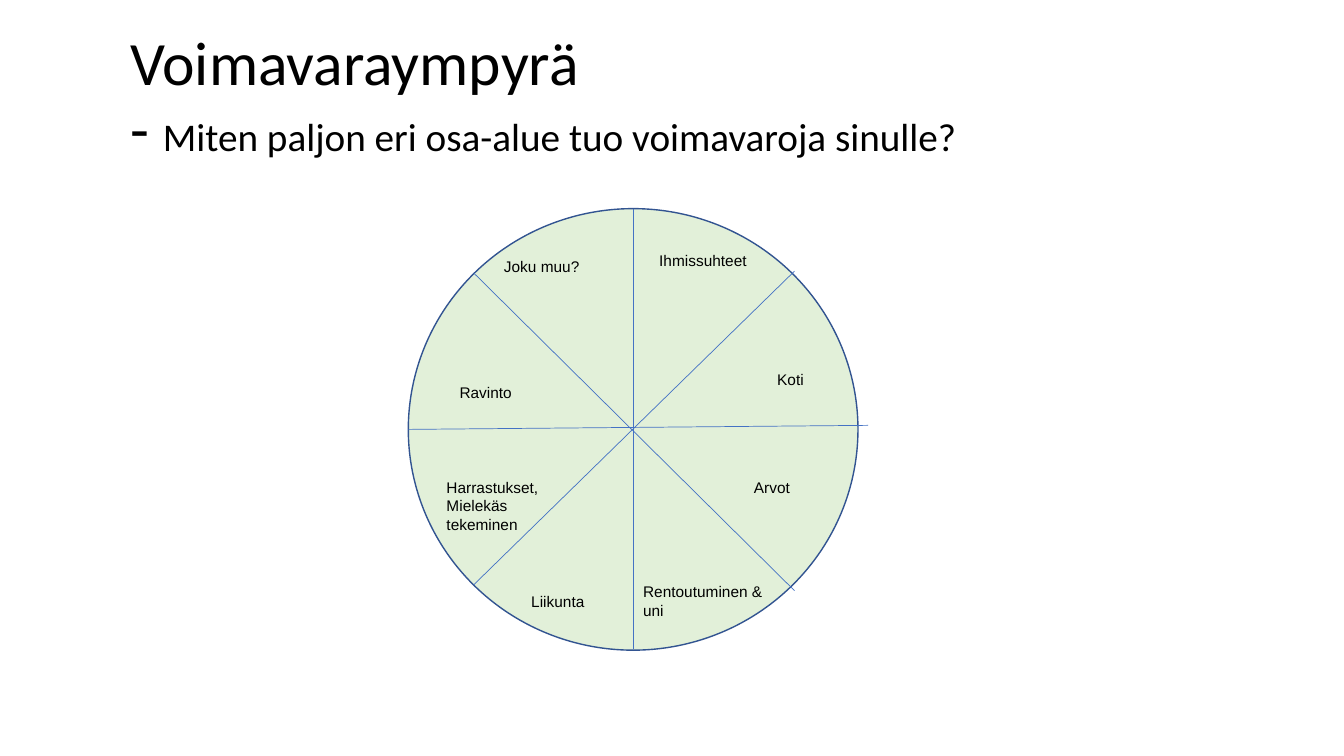
"""Build the resource circle slide: a titled disc cut into eight labelled sectors."""
from lxml.etree import SubElement
from pptx import Presentation
from pptx.dml.color import RGBColor
from pptx.enum.shapes import MSO_CONNECTOR, MSO_SHAPE
from pptx.enum.text import MSO_ANCHOR, MSO_AUTO_SIZE, PP_ALIGN
from pptx.oxml.ns import qn
from pptx.util import Pt

PX = 9144
COLOURS = {"text": "000000", "disc": "E2F0D9", "rim": "325491", "spoke": "4472C4"}


def colour(name):
    return RGBColor.from_string(COLOURS[name])


def place(*lengths):
    return [length * PX for length in lengths]


deck = Presentation()
deck.slide_width, deck.slide_height = place(1333, 750)
page = deck.slides.add_slide(deck.slide_layouts[5])

title = page.shapes.title
title.left, title.top, title.width, title.height = place(129, 55, 1135, 109)
frame = title.text_frame
frame.auto_size = MSO_AUTO_SIZE.NONE
frame.word_wrap = True
frame.vertical_anchor = MSO_ANCHOR.BOTTOM
frame.margin_left = frame.margin_top = frame.margin_right = frame.margin_bottom = 0
para = frame.paragraphs[0]
para.alignment = PP_ALIGN.LEFT
para.line_spacing = 0.9
for text, size in [
    ("Voimavaraympyrä", 44),
    ("- ", 44),
    ("Miten paljon eri osa-alue tuo voimavaroja sinulle?", 28),
]:
    span = para.add_run()
    span.text = text
    span.font.size = Pt(size)
    span.font.name = "Calibri"
    span.font.color.rgb = colour("text")
    if text == "Voimavaraympyrä":
        para.add_line_break()

disc = page.shapes.add_shape(MSO_SHAPE.FLOWCHART_CONNECTOR, *place(405, 207, 446, 438))
disc.shadow.inherit = False
disc.fill.solid()
disc.fill.fore_color.rgb = colour("disc")
disc.line.color.rgb = colour("rim")
disc.line.width = Pt(1)

for ends in [
    (628, 207, 628, 644),
    (405, 426, 861, 422),
    (470, 580, 788, 269),
    (470, 271, 788, 586),
]:
    spoke = page.shapes.add_connector(MSO_CONNECTOR.STRAIGHT, *place(*ends))
    spoke.line.color.rgb = colour("spoke")
    spoke.line.width = Pt(0.5)
    SubElement(spoke._element.spPr, qn("a:effectLst"))

for text, left, top, width, height, wraps in [
    ("Ihmissuhteet", 644, 244, 107, 29, True),
    ("Koti", 761, 362, 47, 29, False),
    ("Arvot", 738, 469, 56, 29, False),
    ("Rentoutuminen & uni", 628, 573, 156, 47, True),
    ("Liikunta", 517, 582, 79, 29, True),
    ("Harrastukset,\nMielekäs\ntekeminen", 433, 469, 122, 66, True),
    ("Ravinto", 446, 375, 73, 29, False),
    ("Joku muu?", 490, 250, 106, 29, True),
]:
    box = page.shapes.add_textbox(*place(left, top, width, height))
    box.text_frame.word_wrap = wraps
    box.text_frame.auto_size = MSO_AUTO_SIZE.SHAPE_TO_FIT_TEXT
    box.text_frame.text = text
    for para in box.text_frame.paragraphs:
        para.font.size = Pt(11)
        para.font.name = "Arial"
        para.font.color.rgb = colour("text")

deck.save("out.pptx")
